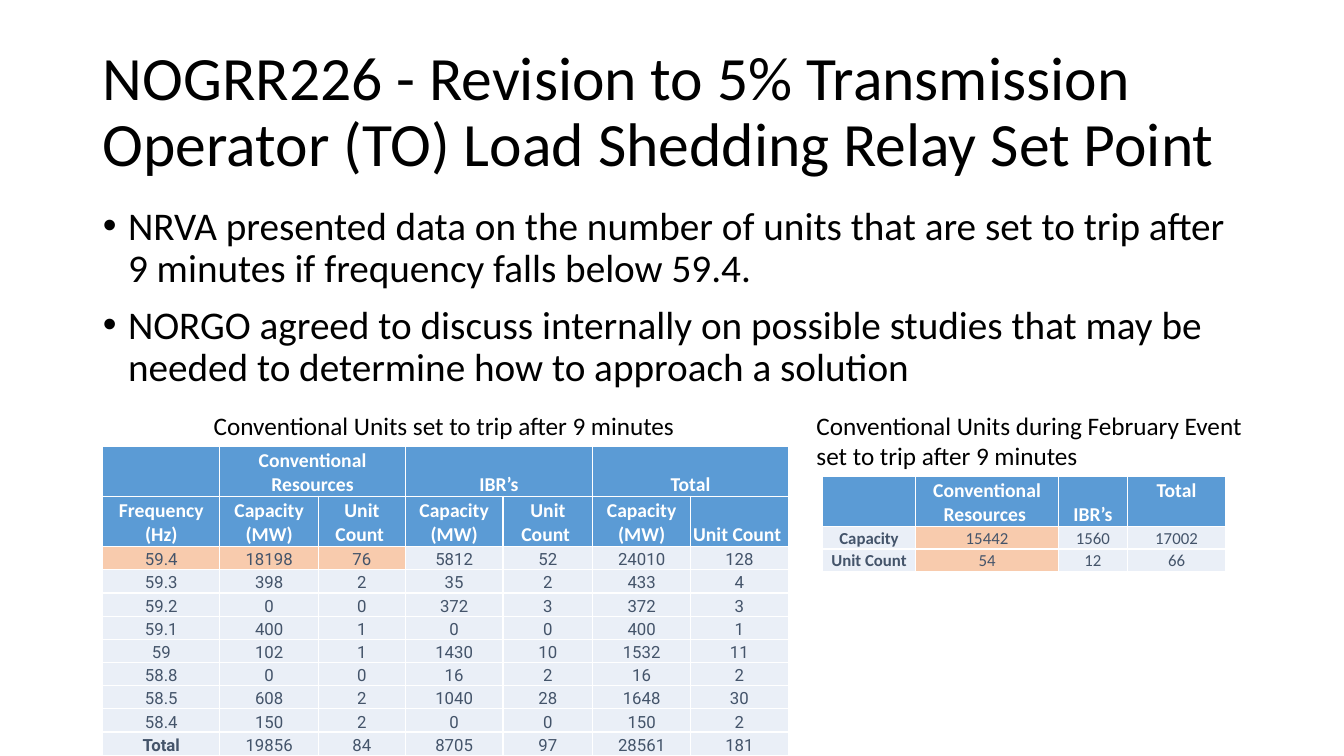
from lxml import etree
from pptx import Presentation
from pptx.dml.color import RGBColor
from pptx.enum.text import MSO_ANCHOR, MSO_AUTO_SIZE, PP_ALIGN
from pptx.oxml.ns import qn
from pptx.util import Inches, Pt

LEFT, CENTER = PP_ALIGN.LEFT, PP_ALIGN.CENTER
TOP, MIDDLE, BOTTOM = MSO_ANCHOR.TOP, MSO_ANCHOR.MIDDLE, MSO_ANCHOR.BOTTOM
NO_FIT, GROW = MSO_AUTO_SIZE.NONE, MSO_AUTO_SIZE.SHAPE_TO_FIT_TEXT

UNIT_HEADERS = [
    ["", "Conventional Resources", "", "IBR’s", "", "Total", ""],
    ["Frequency (Hz)", "Capacity (MW)", "Unit Count ", "Capacity\n(MW)",
     "Unit Count ", "Capacity\n(MW)", "Unit Count "],
]
UNIT_ROWS = [
    ["59.4", 18198, 76, 5812, 52, 24010, 128],
    ["59.3", 398, 2, 35, 2, 433, 4],
    ["59.2", 0, 0, 372, 3, 372, 3],
    ["59.1", 400, 1, 0, 0, 400, 1],
    ["59", 102, 1, 1430, 10, 1532, 11],
    ["58.8", 0, 0, 16, 2, 16, 2],
    ["58.5", 608, 2, 1040, 28, 1648, 30],
    ["58.4", 150, 2, 0, 0, 150, 2],
    ["Total", 19856, 84, 8705, 97, 28561, 181],
]
EVENT_HEADERS = [["", "Conventional Resources ", "IBR’s", "Total"]]
EVENT_ROWS = [
    ["Capacity", 15442, 1560, 17002],
    ["Unit Count", 54, 12, 66],
]


def rgb(color):
    return RGBColor.from_string(color)


def write(tf, text, size=18, font="Calibri", color="000000", bold=False,
          align=LEFT, line=None, before=None):
    for i, part in enumerate(text.split("\n")):
        p = tf.paragraphs[0] if i == 0 else tf.add_paragraph()
        p.alignment = align
        if line is not None:
            p.line_spacing = line
        if before is not None:
            p.space_before = Pt(before)
        if part:
            r = p.add_run()
            r.text = part
            r.font.size = Pt(size)
            r.font.name = font
            r.font.bold = bold
            r.font.color.rgb = rgb(color)


class Deck:
    HEADER, BODY, ACCENT = "5B9BD5", "EAEFF7", "F8CBAD"
    WHITE, SLATE = "FFFFFF", "44546A"

    def __init__(self):
        self.prs = Presentation()
        self.prs.slide_width, self.prs.slide_height = Inches(13.33), Inches(7.5)
        self.s = self.prs.slides.add_slide(self.prs.slide_layouts[1])

    def place(self, sp, x, y, w, h, anchor):
        sp.left, sp.top, sp.width, sp.height = map(Inches, (x, y, w, h))
        tf = sp.text_frame
        tf.word_wrap = True
        tf.auto_size = NO_FIT
        tf.vertical_anchor = anchor
        return tf

    def title(self, text, *box):
        tf = self.place(self.s.shapes.title, *box, MIDDLE)
        write(tf, text, size=44, line=0.9, before=0)

    def bullets(self, items, *box):
        tf = self.place(self.s.placeholders[1], *box, TOP)
        write(tf, "\n".join(items), size=28, line=0.9, before=10)
        for p in tf.paragraphs:
            pPr = p._p.get_or_add_pPr()
            pPr.set("marL", str(Inches(0.25)))
            pPr.set("indent", str(-Inches(0.25)))
            etree.SubElement(pPr, qn("a:buFont")).set("typeface", "Arial")
            etree.SubElement(pPr, qn("a:buChar")).set("char", "•")

    def caption(self, text, x, y, w, h):
        sp = self.s.shapes.add_textbox(*map(Inches, (x, y, w, h)))
        sp.text_frame.word_wrap = True
        sp.text_frame.auto_size = GROW
        write(sp.text_frame, text)

    def borders(self, cell):
        tcPr = cell._tc.get_or_add_tcPr()
        for side in ("lnL", "lnR", "lnT", "lnB"):
            ln = etree.SubElement(tcPr, qn(f"a:{side}"), w=str(Pt(1)))
            fill = etree.SubElement(ln, qn("a:solidFill"))
            etree.SubElement(fill, qn("a:srgbClr"), val=self.WHITE)

    def table(self, headers, rows, x, y, widths, heights, accents,
              font="Calibri", bold_labels=(), top_cells=()):
        data = headers + rows
        frame = self.s.shapes.add_table(
            len(data), len(widths), Inches(x), Inches(y),
            Inches(sum(widths)), Inches(sum(heights)))
        tbl = frame.table
        tbl.first_row = tbl.horz_banding = False
        for column, width in zip(tbl.columns, widths):
            column.width = Inches(width)
        for row, height in zip(tbl.rows, heights):
            row.height = Inches(height)
        for i, values in enumerate(data):
            for j, value in enumerate(values):
                cell = tbl.cell(i, j)
                is_header = i < len(headers)
                cell.margin_left = cell.margin_right = Inches(0.02)
                cell.margin_top, cell.margin_bottom = Inches(0.02), 0
                cell.vertical_anchor = TOP if (i, j) in top_cells else BOTTOM
                self.borders(cell)
                cell.fill.solid()
                fill = self.HEADER if is_header else self.BODY
                cell.fill.fore_color.rgb = rgb(
                    self.ACCENT if (i, j) in accents else fill)
                write(cell.text_frame, str(value), align=CENTER,
                      size=14 if is_header else 12,
                      font="Calibri" if is_header else font,
                      color=self.WHITE if is_header else self.SLATE,
                      bold=is_header or value in bold_labels)
        return tbl


def main():
    deck = Deck()
    deck.title("NOGRR226 - Revision to 5% Transmission Operator (TO) "
               "Load Shedding Relay Set Point", 0.92, 0.4, 11.5, 1.45)
    deck.bullets([
        "NRVA presented data on the number of units that are set to trip "
        "after 9 minutes if frequency falls below 59.4.",
        "NORGO agreed to discuss internally on possible studies that may be "
        "needed to determine how to approach a solution",
    ], 0.92, 2, 11.5, 1.97)

    units = deck.table(
        UNIT_HEADERS, UNIT_ROWS, 1.02, 4.43,
        [1.16, 0.98, 0.86, 0.97, 0.89, 0.97, 0.97],
        [0.49, 0.5] + [0.23] * len(UNIT_ROWS),
        accents=[(2, j) for j in range(3)], font="Roboto",
        bold_labels=["Total"])
    for j in (1, 3, 5):
        units.cell(0, j).merge(units.cell(0, j + 1))

    deck.table(
        EVENT_HEADERS, EVENT_ROWS, 8.16, 4.73,
        [0.92, 1.42, 0.68, 0.98], [0.49] + [0.22] * len(EVENT_ROWS),
        accents=[(1, 1), (2, 1)], bold_labels=["Capacity", "Unit Count"],
        top_cells=[(0, 3)])

    deck.caption("Conventional Units during February Event set to trip "
                 "after 9 minutes", 8, 4.02, 4.56, 0.71)
    deck.caption("Conventional Units set to trip after 9 minutes",
                 2.02, 4.02, 5.55, 0.4)
    deck.prs.save("out.pptx")


if __name__ == "__main__":
    main()
